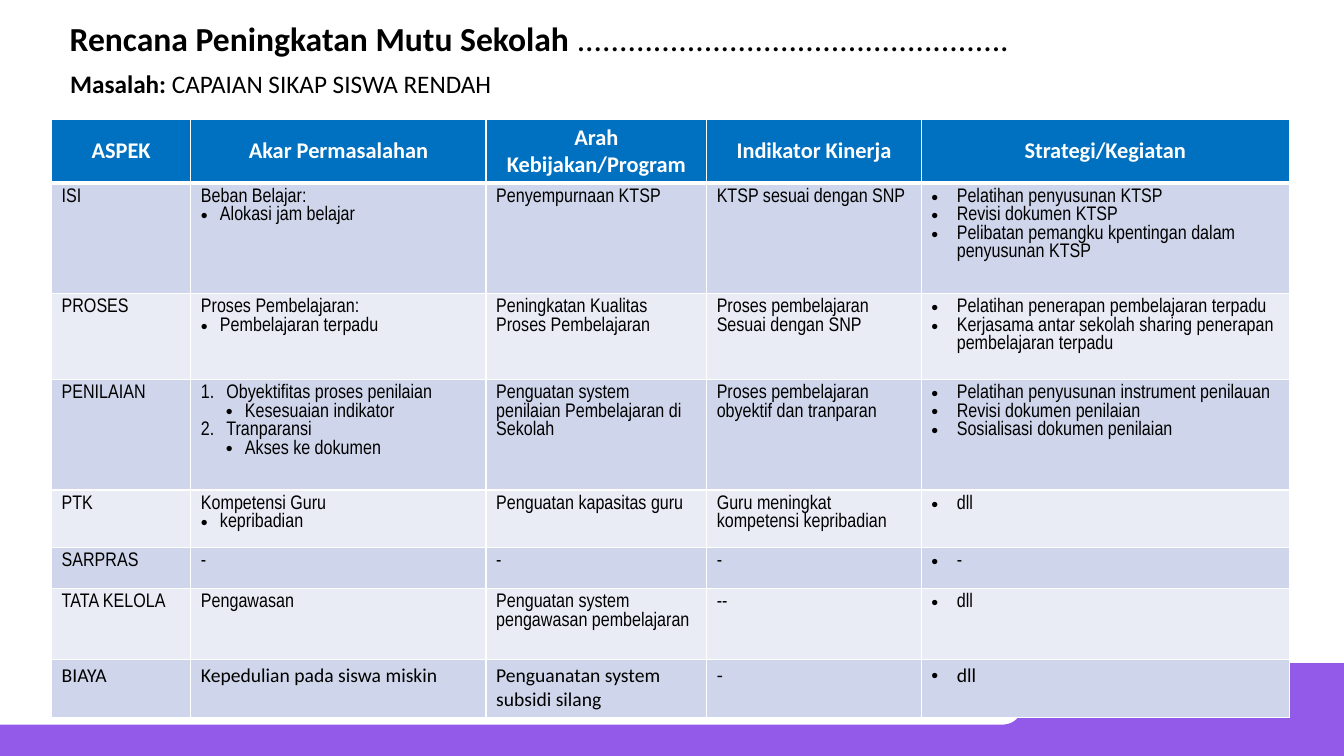
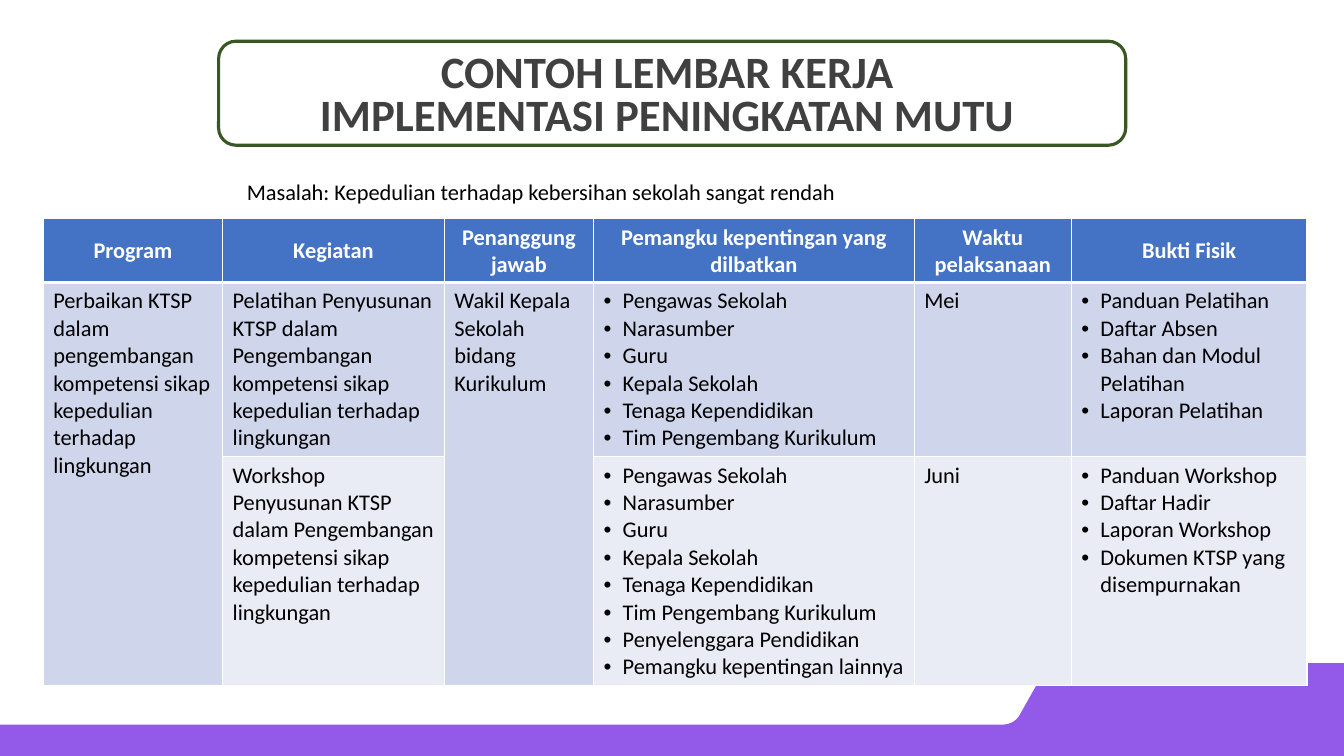
from collections import namedtuple

from lxml import etree
from pptx import Presentation
from pptx.dml.color import RGBColor
from pptx.enum.shapes import MSO_SHAPE as Preset
from pptx.enum.text import MSO_ANCHOR as Anchor, MSO_AUTO_SIZE as AutoSize, PP_ALIGN as Align
from pptx.oxml.ns import qn
from pptx.util import Cm, Pt

# Shared style
WIDTH, HEIGHT = 33.87, 19.05
FONT, NARROW = "Calibri", "Arial Narrow"
BLACK, WHITE, GREY = "000000", "FFFFFF", "404040"
PURPLE, GREEN = "935AE9", "385723"
HEADER_BLUE, HEADER_INDIGO = "0070C0", "4472C4"
STRIPES = ("CFD5EA", "E9EBF5")

# Paragraph kinds in table cells: list mark, level, left margin and hang in cm
Kind = namedtuple("Kind", "mark level margin hang")
PLAIN = Kind(None, 0, 0, 0)
BULLET = Kind("•", 0, 0.48, 0.48)
WIDE_BULLET = Kind("•", 0, 0.64, 0.64)
NUMBER = Kind("1.", 0, 0.64, 0.64)
SUB_BULLET = Kind("•", 1, 1.11, 0.48)


def color(hex_text):
    return RGBColor.from_string(hex_text)


def listed(kind, *texts):
    return [(kind, text) for text in texts]


def curve(start, pull_a, pull_b, end, steps=8):
    """Points along a cubic curve, both ends included."""
    weights = [((1 - t) ** 3, 3 * t * (1 - t) ** 2, 3 * t * t * (1 - t), t ** 3)
               for t in (i / steps for i in range(steps + 1))]
    return [tuple(sum(w * p[axis] for w, p in zip(row, (start, pull_a, pull_b, end)))
                  for axis in (0, 1)) for row in weights]


class Deck:
    def __init__(self):
        self.prs = Presentation()
        self.prs.slide_width, self.prs.slide_height = Cm(WIDTH), Cm(HEIGHT)
        self.slide = None

    def new_slide(self):
        self.slide = self.prs.slides.add_slide(self.prs.slide_layouts[5])

    def master_band(self):
        """Draw the bottom band and hand it to the master, for every slide."""
        top, shelf = 16.71, 18.26
        outline = (curve((26.8, top), (26.57, top), (26.37, 16.84), (26.26, 17.02))
                   + curve((25.7, 18.01), (25.63, 18.16), (25.45, shelf), (25.27, shelf))
                   + [(0, shelf), (0, HEIGHT), (WIDTH, HEIGHT), (WIDTH, top)])
        points = [(Cm(x), Cm(y)) for x, y in outline]
        builder = self.slide.shapes.build_freeform(*points[0], scale=1.0)
        builder.add_line_segments(points[1:], close=True)
        band = builder.convert_to_shape()
        band.shadow.inherit = False
        band.fill.solid()
        band.fill.fore_color.rgb = color(PURPLE)
        band.line.fill.background()
        self.prs.slide_master.shapes.element.insert(2, band.element)

    def run(self, paragraph, text, size, ink=BLACK, bold=False, font=FONT):
        run = paragraph.add_run()
        run.text = text
        run.font.name, run.font.size, run.font.bold = font, Pt(size), bold
        run.font.color.rgb = color(ink)

    def title(self, box, align=Align.LEFT, spacing=1.0):
        heading = self.slide.shapes.title
        heading.left, heading.top, heading.width, heading.height = map(Cm, box)
        frame = heading.text_frame
        frame.word_wrap, frame.auto_size = True, AutoSize.NONE
        frame.vertical_anchor = Anchor.MIDDLE
        paragraph = frame.paragraphs[0]
        paragraph.alignment, paragraph.line_spacing = align, spacing
        return paragraph

    def label(self, box, wrap=True, spacing=1.0):
        frame = self.slide.shapes.add_textbox(*map(Cm, box)).text_frame
        frame.word_wrap = wrap
        paragraph = frame.paragraphs[0]
        paragraph.line_spacing = spacing
        return paragraph

    def frame(self, box, ink):
        outline = self.slide.shapes.add_shape(Preset.ROUNDED_RECTANGLE, *map(Cm, box))
        outline.shadow.inherit = False
        outline.fill.background()
        outline.line.color.rgb, outline.line.width = color(ink), Pt(2.25)

    def set_kind(self, paragraph, kind):
        if kind.mark is None:
            return
        paragraph.level = kind.level
        props = paragraph._p.get_or_add_pPr()
        props.set("marL", str(Cm(kind.margin)))
        props.set("indent", str(-Cm(kind.hang)))
        if kind is NUMBER:
            etree.SubElement(props, qn("a:buFont"), typeface="+mj-lt")
            etree.SubElement(props, qn("a:buAutoNum"), type="arabicPeriod")
        else:
            etree.SubElement(props, qn("a:buFont"), typeface="Arial")
            etree.SubElement(props, qn("a:buChar"), char=kind.mark)

    def borders(self, cell, top, bottom):
        props = cell._tc.get_or_add_tcPr()
        for place, (side, points) in enumerate(zip("LRTB", (1, 1, top, bottom))):
            edge = etree.Element(qn(f"a:ln{side}"), w=str(Pt(points)))
            fill = etree.SubElement(edge, qn("a:solidFill"))
            etree.SubElement(fill, qn("a:srgbClr"), val=WHITE)
            props.insert(place, edge)

    def cell(self, cell, content, fill, row, size, font):
        header = row == 0
        cell.fill.solid()
        cell.fill.fore_color.rgb = color(fill)
        self.borders(cell, top=3 if row == 1 else 1, bottom=3 if header else 1)
        cell.vertical_anchor = Anchor.MIDDLE if header else Anchor.TOP
        items = [(PLAIN, content)] if isinstance(content, str) else content or []
        for i, (kind, text) in enumerate(items):
            paragraph = cell.text_frame.paragraphs[0] if i == 0 else cell.text_frame.add_paragraph()
            self.set_kind(paragraph, kind)
            if header:
                paragraph.alignment = Align.CENTER
            self.run(paragraph, text, size, WHITE if header else BLACK, header, font)

    def table(self, corner, widths, heights, rows, header_fill, size, fonts):
        """A None cell joins the cell above it."""
        grid = self.slide.shapes.add_table(
            len(rows), len(widths), *map(Cm, (*corner, sum(widths), sum(heights)))).table
        grid.first_row = grid.horz_banding = False
        for column, width in zip(grid.columns, widths):
            column.width = Cm(width)
        for line, height in zip(grid.rows, heights):
            line.height = Cm(height)
        for r, contents in enumerate(rows):
            fill = STRIPES[(r - 1) % 2] if r else header_fill
            for c, content in enumerate(contents):
                self.cell(grid.cell(r, c), content, fill, r, size if r else 16, fonts[r])
                if content is None:
                    grid.cell(r - 1, c).merge(grid.cell(r, c))

    def improvement_plan(self):
        self.new_slide()
        self.master_band()
        heading = self.title((1.5, 0.28, 27.36, 1.35))
        self.run(heading, "Rencana Peningkatan Mutu Sekolah ", 24, bold=True)
        self.run(heading, "." * 51, 24)
        problem = self.label((1.52, 1.6, 11.3, 1.02), wrap=False)
        self.run(problem, "Masalah: ", 18, bold=True)
        self.run(problem, "CAPAIAN SIKAP SISWA RENDAH", 18)
        plan = [
            ("ASPEK", "Akar Permasalahan", "Arah Kebijakan/Program", "Indikator Kinerja",
             "Strategi/Kegiatan"),
            ("ISI",
             [(PLAIN, "Beban Belajar:"), (BULLET, "Alokasi jam belajar")],
             "Penyempurnaan KTSP",
             "KTSP sesuai dengan SNP",
             listed(WIDE_BULLET, "Pelatihan penyusunan KTSP", "Revisi dokumen KTSP",
                    "Pelibatan pemangku kpentingan dalam penyusunan KTSP")),
            ("PROSES",
             [(PLAIN, "Proses Pembelajaran:"), (BULLET, "Pembelajaran terpadu")],
             "Peningkatan Kualitas Proses Pembelajaran",
             "Proses pembelajaran Sesuai dengan SNP",
             listed(WIDE_BULLET, "Pelatihan penerapan pembelajaran terpadu",
                    "Kerjasama antar sekolah sharing penerapan pembelajaran terpadu")),
            ("PENILAIAN",
             [(NUMBER, "Obyektifitas proses penilaian"), (SUB_BULLET, "Kesesuaian indikator"),
              (NUMBER, "Tranparansi"), (SUB_BULLET, "Akses ke dokumen")],
             "Penguatan system penilaian Pembelajaran di Sekolah",
             "Proses pembelajaran obyektif dan tranparan",
             listed(WIDE_BULLET, "Pelatihan penyusunan instrument penilauan",
                    "Revisi dokumen penilaian", "Sosialisasi dokumen penilaian")),
            ("PTK",
             [(PLAIN, "Kompetensi Guru"), (BULLET, "kepribadian")],
             "Penguatan kapasitas guru",
             "Guru meningkat kompetensi kepribadian",
             listed(WIDE_BULLET, "dll")),
            ("SARPRAS", "-", "-", "-", listed(WIDE_BULLET, "-")),
            ("TATA KELOLA", "Pengawasan", "Penguatan system pengawasan pembelajaran", "--",
             listed(WIDE_BULLET, "dll")),
            ("BIAYA", "Kepedulian pada siswa miskin", "Penguanatan system subsidi silang", "-",
             listed(WIDE_BULLET, "dll")),
        ]
        self.table((1.3, 3), (3.51, 7.44, 5.56, 5.41, 9.27),
                   (1.6, 2.79, 2.16, 2.79, 1.27, 1.04, 1.78, 1.46),
                   plan, HEADER_BLUE, 14, [FONT] + [NARROW] * 6 + [FONT])

    def worksheet(self):
        self.new_slide()
        heading = self.title((2.34, 0.61, 29.21, 3.68), Align.CENTER, 0.8)
        self.run(heading, "CONTOH LEMBAR KERJA ", 32, GREY, True)
        heading.add_line_break()
        self.run(heading, "IMPLEMENTASI PENINGKATAN MUTU ", 32, GREY, True)
        self.frame((5.51, 1.04, 22.86, 2.62), GREEN)
        problem = self.label((5.97, 4.45, 21.89, 1.02), spacing=0.9)
        self.run(problem, "Masalah: Kepedulian terhadap kebersihan sekolah sangat rendah", 16)
        people = listed(BULLET, "Pengawas Sekolah", "Narasumber", "Guru", "Kepala Sekolah",
                        "Tenaga Kependidikan", "Tim Pengembang Kurikulum")
        goal = "kompetensi sikap kepedulian terhadap lingkungan"
        activities = [
            ("Program", "Kegiatan", "Penanggung jawab", "Pemangku kepentingan yang dilbatkan",
             "Waktu pelaksanaan", "Bukti Fisik"),
            (f"Perbaikan KTSP dalam pengembangan {goal}",
             f"Pelatihan Penyusunan KTSP dalam Pengembangan {goal}",
             "Wakil Kepala Sekolah bidang Kurikulum",
             people,
             "Mei",
             listed(BULLET, "Panduan Pelatihan", "Daftar Absen", "Bahan dan Modul Pelatihan",
                    "Laporan Pelatihan")),
            (None,
             f"Workshop Penyusunan KTSP dalam Pengembangan {goal}",
             None,
             people + listed(BULLET, "Penyelenggara Pendidikan", "Pemangku kepentingan lainnya"),
             "Juni",
             listed(BULLET, "Panduan Workshop", "Daftar Hadir", "Laporan Workshop",
                    "Dokumen KTSP yang disempurnakan")),
        ]
        self.table((1.09, 5.51), (4.52, 5.59, 3.76, 8.08, 3.96, 5.94), (1.6, 4.39, 5.77),
                   activities, HEADER_INDIGO, 16, [FONT] * 3)


def main():
    deck = Deck()
    deck.improvement_plan()
    deck.worksheet()
    deck.prs.save("out.pptx")


if __name__ == "__main__":
    main()
